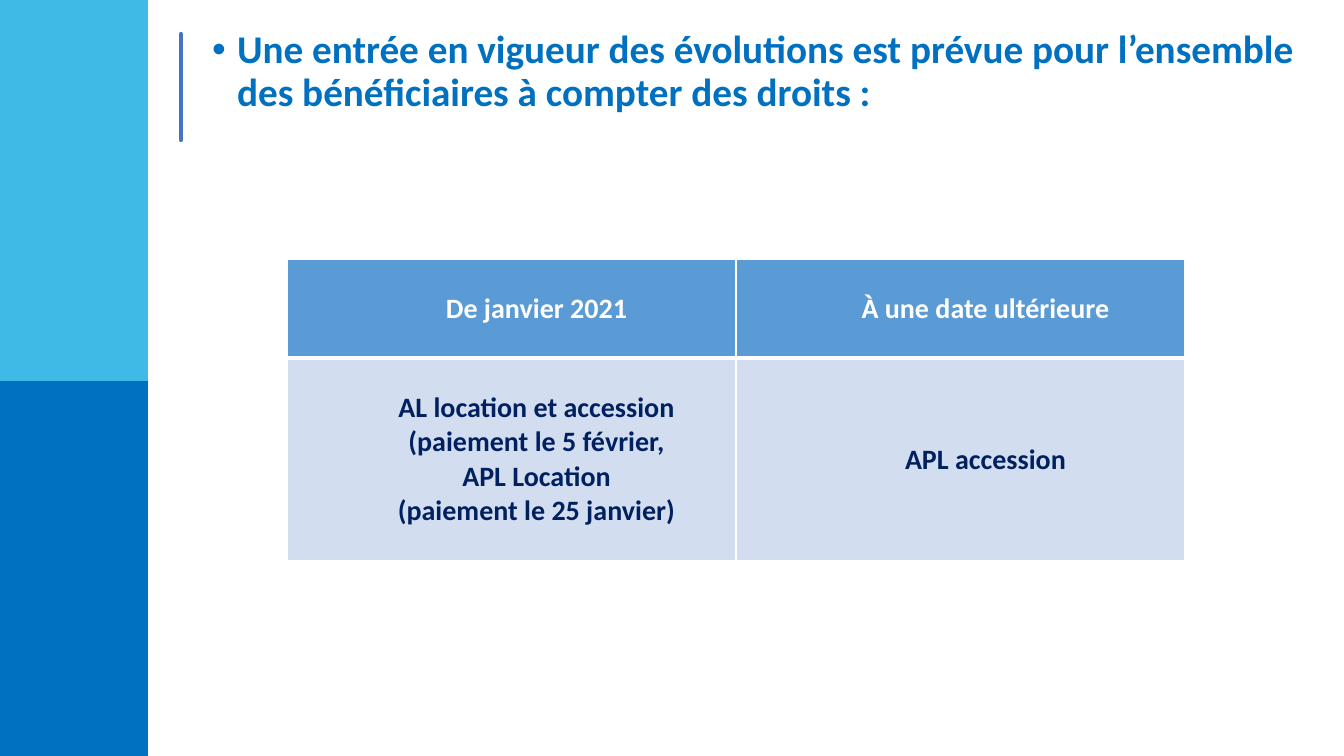
from pptx import Presentation
from pptx.dml.color import RGBColor
from pptx.enum.shapes import MSO_CONNECTOR, MSO_SHAPE
from pptx.enum.text import MSO_ANCHOR, MSO_AUTO_SIZE, PP_ALIGN
from pptx.oxml.ns import qn
from pptx.util import Pt
from lxml import etree

PX = 914400 / 100.8
RECTANGLE = MSO_SHAPE.RECTANGLE
STRAIGHT = MSO_CONNECTOR.STRAIGHT
TOP, MIDDLE = MSO_ANCHOR.TOP, MSO_ANCHOR.MIDDLE
LEFT, CENTER = PP_ALIGN.LEFT, PP_ALIGN.CENTER
NO_AUTOFIT = MSO_AUTO_SIZE.NONE


def px(*lengths):
    return [round(length * PX) for length in lengths]


def write(frame, text, size, color, align, indent, hanging=0, bullet=None, spacing=None):
    for number, line in enumerate(text.split("\n")):
        paragraph = frame.paragraphs[0] if number == 0 else frame.add_paragraph()
        properties = paragraph._p.get_or_add_pPr()
        margin, first = px(indent, -hanging)
        properties.set("marL", str(margin))
        properties.set("indent", str(first))
        if bullet:
            etree.SubElement(properties, qn("a:buFont"), typeface="Arial")
            etree.SubElement(properties, qn("a:buChar"), char=bullet)
        paragraph.alignment = align
        if spacing:
            paragraph.line_spacing = spacing
        run = paragraph.add_run()
        run.text = line
        run.font.name = "Calibri"
        run.font.size = Pt(size)
        run.font.bold = True
        run.font.color.rgb = RGBColor.from_string(color)


presentation = Presentation()
presentation.slide_width, presentation.slide_height = px(1344, 756)
slide = presentation.slides.add_slide(presentation.slide_layouts[5])

for top, height, color in [(381, 375, "0070C0"), (0, 381, "3FBAE7")]:
    band = slide.shapes.add_shape(RECTANGLE, *px(0, top, 148, height))
    band.shadow.inherit = False
    band.fill.solid()
    band.fill.fore_color.rgb = RGBColor.from_string(color)
    band.line.fill.background()

title_rule = slide.shapes.add_connector(STRAIGHT, *px(181, 34, 181, 140))
title_rule.line.color.rgb = RGBColor.from_string("4472C4")
title_rule.line.width = Pt(3)
title_rule.line._get_or_add_ln().set("cap", "rnd")
etree.SubElement(title_rule._element.spPr, qn("a:effectLst"))

title = slide.shapes.title
title.left, title.top, title.width, title.height = px(202, 25, 1108, 121)
title.text_frame.word_wrap = True
title.text_frame.auto_size = NO_AUTOFIT
title.text_frame.vertical_anchor = TOP
write(title.text_frame,
      "Une entrée en vigueur des évolutions est prévue pour l’ensemble des bénéficiaires à compter des droits :",
      size=28, color="0070C0", align=LEFT, indent=25, hanging=25, bullet="•", spacing=0.9)

schedule_rows = [
    (99, "5B9BD5", "FFFFFF", (1, 3), ["De janvier 2021", "À une date ultérieure"]),
    (203, "D2DEEF", "002060", (3, 1),
     ["AL location et accession\n(paiement le 5 février,\nAPL Location\n(paiement le 25 janvier)",
      "APL accession"]),
]
schedule = slide.shapes.add_table(2, 2, *px(287, 259, 898, 302)).table
for column in schedule.columns:
    column.width = px(449)[0]
for row, (height, fill, color, (above, below), labels) in enumerate(schedule_rows):
    schedule.rows[row].height = px(height)[0]
    for column, label in enumerate(labels):
        cell = schedule.cell(row, column)
        cell.margin_left, cell.margin_right, cell.margin_top, cell.margin_bottom = px(7, 7, 0, 0)
        cell.vertical_anchor = MIDDLE
        cell_properties = cell._tc.get_or_add_tcPr()
        for side, width in [("lnL", 1), ("lnR", 1), ("lnT", above), ("lnB", below)]:
            border = etree.SubElement(cell_properties, qn(f"a:{side}"), w=str(Pt(width)))
            border_fill = etree.SubElement(border, qn("a:solidFill"))
            etree.SubElement(border_fill, qn("a:srgbClr"), val="FFFFFF")
        cell.fill.solid()
        cell.fill.fore_color.rgb = RGBColor.from_string(fill)
        write(cell.text_frame, label, size=20, color=color, align=CENTER, indent=50)

presentation.save("out.pptx")
